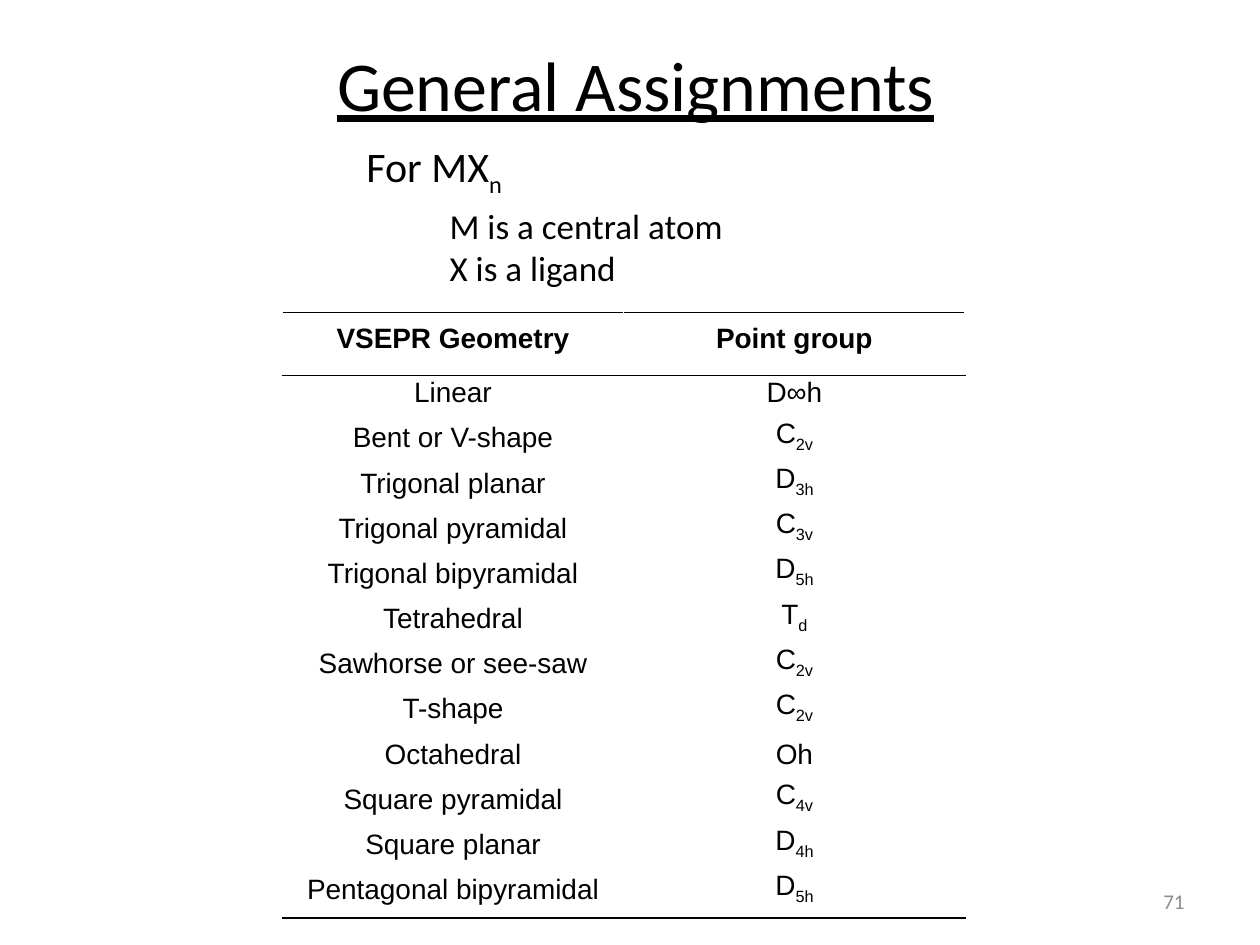
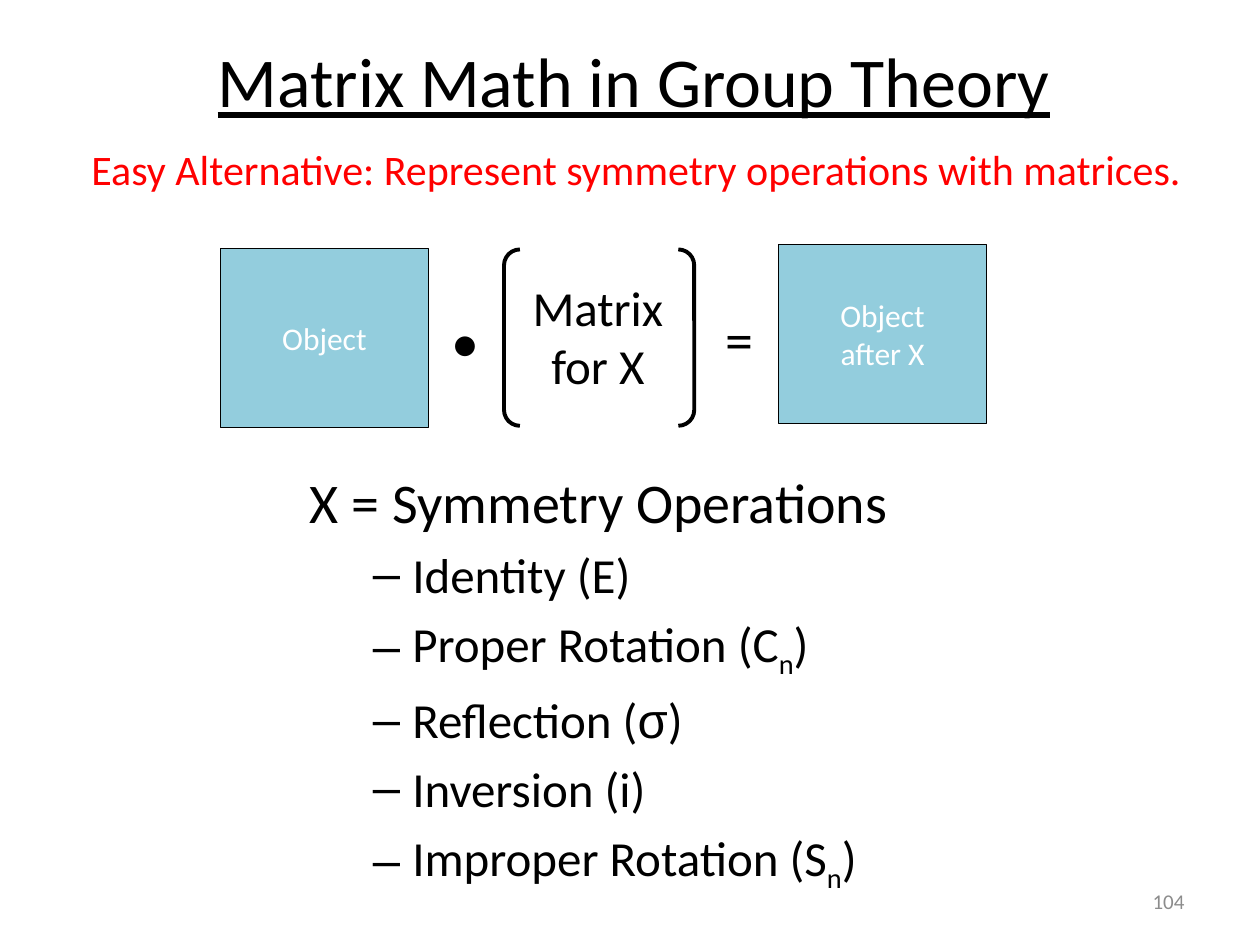
from lxml.etree import SubElement
from pptx import Presentation
from pptx.dml.color import RGBColor
from pptx.enum.shapes import MSO_SHAPE
from pptx.enum.text import MSO_ANCHOR, MSO_AUTO_SIZE, PP_ALIGN
from pptx.oxml import parse_xml
from pptx.oxml.ns import nsdecls, qn
from pptx.util import Inches, Pt

# Shared style
BLACK, WHITE, RED, GREY, AQUA = "000000", "FFFFFF", "FF0000", "8C8C8C", "93CDDD"
COLUMNS, ROWS = 100, 75
TITLE_ONLY, TITLE_AND_BODY = 5, 1
LEFT, CENTER, RIGHT = PP_ALIGN.LEFT, PP_ALIGN.CENTER, PP_ALIGN.RIGHT
TOP, MIDDLE = MSO_ANCHOR.TOP, MSO_ANCHOR.MIDDLE
PAGE_NUMBER_AREA = (71.7, 69.5, 23.3, 4)


def color(code):
    return RGBColor.from_string(code)


def with_subscript(stem, low, tail=""):
    """Spans of a paragraph whose middle part is lowered."""
    return [(stem, {}), (low, {"baseline": -25000}), (tail, {})]


class SlideBuilder:
    """Holds the style and the slide being built."""

    def __init__(self):
        self.deck = Presentation()
        self.deck.slide_width, self.deck.slide_height = Inches(10), Inches(7.5)
        self.column = self.deck.slide_width / COLUMNS
        self.row = self.deck.slide_height / ROWS
        self.page = None

    def area(self, left, top, width, height):
        """Grid columns and rows turned into slide lengths."""
        return (round(left * self.column), round(top * self.row),
                round(width * self.column), round(height * self.row))

    def start(self, layout, title, title_area, number):
        self.page = self.deck.slides.add_slide(self.deck.slide_layouts[layout])
        self.place(self.page.shapes.title, title_area)
        self.fill_text(self.page.shapes.title, [title], 40, align=CENTER,
                       anchor=MIDDLE, underline=True)
        self.text(PAGE_NUMBER_AREA, [number], 12, align=RIGHT, anchor=MIDDLE, ink=GREY)

    def place(self, shape, area):
        names = ("left", "top", "width", "height")
        for name, value in zip(names, self.area(*area)):
            setattr(shape, name, value)

    def fill_para(self, para, content, size, ink=BLACK, name="Calibri", **style):
        """A paragraph is a string or a list of (text, style) spans."""
        spans = [(content, {})] if isinstance(content, str) else content
        for text, extra in spans:
            if not text:
                continue
            span = para.add_run()
            span.text = text
            formats = {"size": Pt(size), "name": name, **style, **extra}
            baseline = formats.pop("baseline", None)
            for key, value in formats.items():
                setattr(span.font, key, value)
            span.font.color.rgb = color(ink)
            if baseline:
                span._r.get_or_add_rPr().set("baseline", str(baseline))

    def fill_text(self, shape, paragraphs, size, align=LEFT, anchor=TOP, **style):
        frame = shape.text_frame
        settings = {"word_wrap": True, "auto_size": MSO_AUTO_SIZE.NONE,
                    "vertical_anchor": anchor}
        for key, value in settings.items():
            setattr(frame, key, value)
        for index, content in enumerate(paragraphs):
            para = frame.add_paragraph() if index else frame.paragraphs[0]
            para.alignment = align
            self.fill_para(para, content, size, **style)

    def text(self, area, paragraphs, size, **style):
        box = self.page.shapes.add_textbox(*self.area(*area))
        self.fill_text(box, paragraphs, size, **style)

    def shape(self, kind, area, line_width, fill=None):
        shape = self.page.shapes.add_shape(kind, *self.area(*area))
        shape.shadow.inherit = False
        if fill:
            shape.fill.solid()
            shape.fill.fore_color.rgb = color(fill)
        else:
            shape.fill.background()
        shape.line.color.rgb = color(BLACK)
        shape.line.width = Pt(line_width)
        return shape

    def block(self, area, paragraphs):
        shape = self.shape(MSO_SHAPE.RECTANGLE, area, 0.25, AQUA)
        self.fill_text(shape, paragraphs, 18, align=CENTER, anchor=MIDDLE, ink=WHITE)

    def bullet_list(self, area, heading, items):
        body = self.page.placeholders[1]
        self.place(body, area)
        self.fill_text(body, [heading], 32)
        first = body.text_frame.paragraphs[0]
        SubElement(first._p.get_or_add_pPr(), qn("a:buNone"))
        first.space_before = Pt(0)
        for item in items:
            para = body.text_frame.add_paragraph()
            para.level = 1
            para.space_before = Pt(5.6)
            self.fill_para(para, item, 28)

    def rule(self, cell, sides):
        """Draws thin lines on the named sides (T or B) of a cell."""
        for position, side in enumerate(sides):
            line = parse_xml(
                f'<a:ln{side} {nsdecls("a")} w="12700"><a:solidFill>'
                f'<a:srgbClr val="{BLACK}"/></a:solidFill></a:ln{side}>')
            cell._tc.get_or_add_tcPr().insert(position, line)

    def table(self, area, records, header_height, row_height):
        grid = self.page.shapes.add_table(
            len(records), len(records[0]), *self.area(*area)).table
        grid.first_row = grid.horz_banding = False
        for index, record in enumerate(records):
            height = row_height if index else header_height
            grid.rows[index].height = round(height * self.row)
            sides = {0: "TB", 1: "T", len(records) - 1: "B"}.get(index, "")
            for place, content in enumerate(record):
                self.cell(grid.cell(index, place), content, sides, index == 0)

    def cell(self, cell, content, sides, bold):
        for edge in ("left", "right", "top", "bottom"):
            setattr(cell, f"margin_{edge}", Inches(0.01))
        cell.vertical_anchor = MIDDLE
        cell.fill.solid()
        cell.fill.fore_color.rgb = color(WHITE)
        self.rule(cell, sides)
        para = cell.text_frame.paragraphs[0]
        para.alignment, para.line_spacing = CENTER, Pt(12)
        self.fill_para(para, content, 16, name="Arial", bold=bold)


def add_assignments(builder):
    builder.start(TITLE_ONLY, "General Assignments", (6.2, 2.8, 88.5, 7.7), "71")

    # Geometries and their point groups
    point_groups = [
        ("VSEPR Geometry", "Point group"),
        ("Linear", "D∞h"),
        ("Bent or V-shape", with_subscript("C", "2v")),
        ("Trigonal planar", with_subscript("D", "3h")),
        ("Trigonal pyramidal", with_subscript("C", "3v")),
        ("Trigonal bipyramidal", with_subscript("D", "5h")),
        ("Tetrahedral", with_subscript("T", "d")),
        ("Sawhorse or see-saw", with_subscript("C", "2v")),
        ("T-shape", with_subscript("C", "2v")),
        ("Octahedral", "Oh"),
        ("Square pyramidal", with_subscript("C", "4v")),
        ("Square planar", with_subscript("D", "4h")),
        ("Pentagonal bipyramidal", with_subscript("D", "5h")),
    ]
    builder.table((22.4, 24.8, 54.2, 48.1), point_groups, 5, 3.59)

    # Meaning of the formula
    builder.text((28.1, 10.7, 15.6, 5), [with_subscript("For MX", "n")], 24)
    builder.text((34.7, 15.7, 38.9, 7.7), ["M is a central atom", "X is a ligand"], 20)


def add_matrix_math(builder):
    builder.start(TITLE_AND_BODY, "Matrix Math in Group Theory", (5.3, 0.1, 90, 12.5), "104")
    builder.text((2.4, 10.9, 96.2, 5),
                 ["Easy Alternative: Represent symmetry operations with matrices."],
                 24, align=CENTER, ink=RED)

    # Object times matrix gives the new object
    builder.block((17.5, 19.7, 16.5, 14.2), ["Object"])
    builder.block((61.8, 19.4, 16.5, 14.2), ["Object", "after X"])
    builder.text((56.2, 23.7, 5, 6.4), ["="], 32, align=CENTER)
    builder.text((34.5, 23.8, 4.9, 6.4), ["•"], 32, align=CENTER)
    brackets = builder.shape(MSO_SHAPE.DOUBLE_BRACKET, (40, 19.8, 15.1, 14), 2.25)
    brackets.adjustments[0] = 0.09
    builder.text((39.5, 21.5, 15.9, 10.4), ["Matrix for X"], 28, align=CENTER)

    # Symmetry operations
    builder.bullet_list((23.6, 36.6, 48.1, 34.6), "X = Symmetry Operations", [
        "Identity (E)",
        with_subscript("Proper Rotation (C", "n", ")"),
        [("Reflection (", {}), ("σ", {"name": "Arial"}), (")", {})],
        "Inversion (i)",
        with_subscript("Improper Rotation (S", "n", ")"),
    ])


def main():
    builder = SlideBuilder()
    add_assignments(builder)
    add_matrix_math(builder)
    builder.deck.save("out.pptx")


if __name__ == "__main__":
    main()
